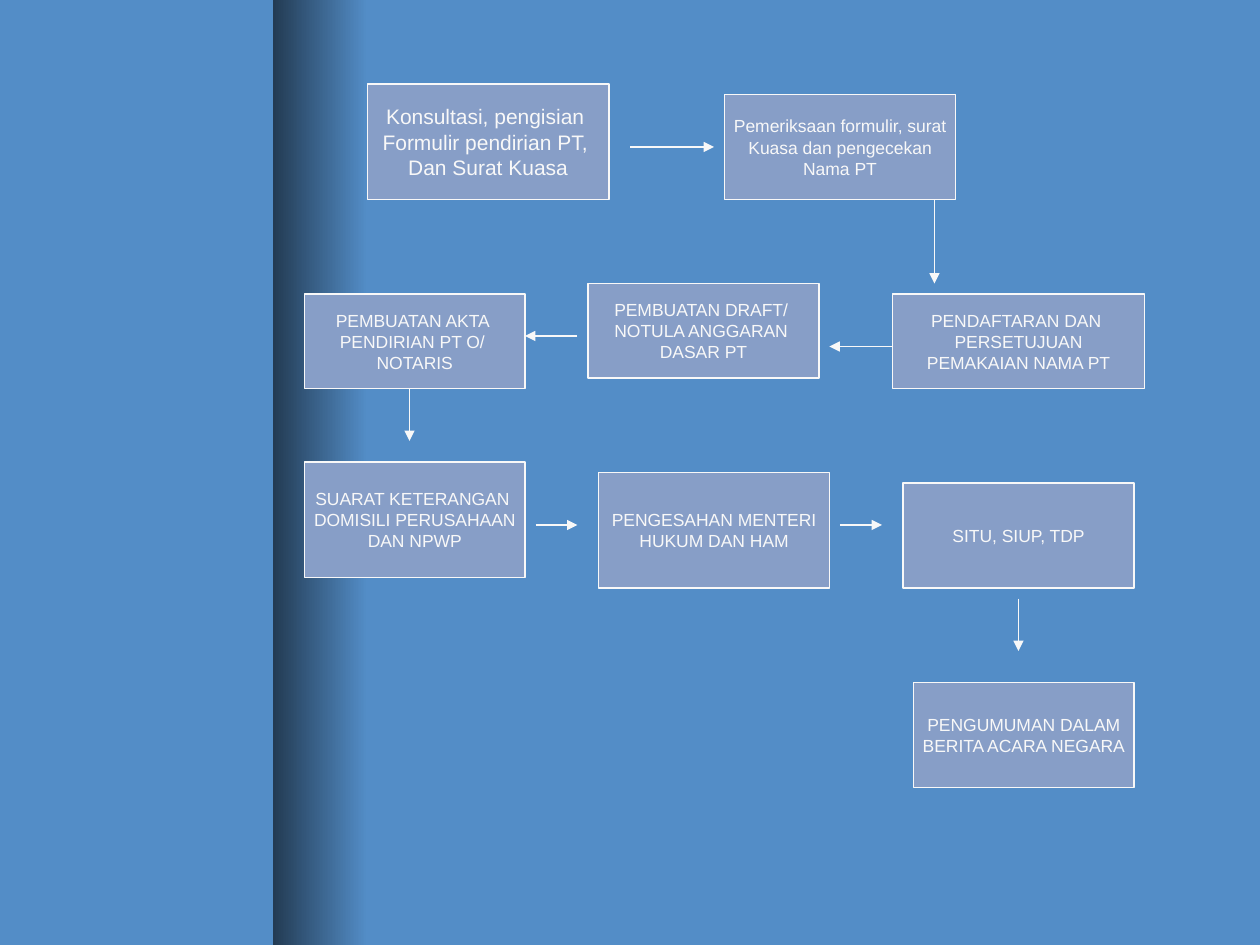
from dataclasses import dataclass

from lxml import etree
from pptx import Presentation, util as u
from pptx.dml.color import RGBColor
from pptx.enum import shapes, text
from pptx.oxml.ns import qn

CELL = u.Inches(1) // 12  # the slide is a grid of 120 columns by 90 rows
COLS, ROWS = 120, 90


@dataclass(frozen=True)
class Theme:
    background: RGBColor = RGBColor.from_string("538DC7")
    band_dark: RGBColor = RGBColor.from_string("233B53")
    box: RGBColor = RGBColor.from_string("879EC7")
    light: RGBColor = RGBColor.from_string("F8F8F8")
    font: str = "Arial"
    size: int = 10
    first_size: int = 12
    line: float = 0.75


@dataclass(frozen=True)
class Step:
    col: int
    row: int
    cols: int
    rows: int
    lines: tuple[str, ...]
    size: int = Theme.size


@dataclass(frozen=True)
class Arrow:
    col: int
    row: int
    across: int = 0
    down: int = 0


THEME = Theme()

STEPS = [
    Step(35, 8, 23, 11, ("Konsultasi, pengisian ", "Formulir pendirian PT, ",
                         "Dan Surat Kuasa"), THEME.first_size),
    Step(69, 9, 22, 10, ("Pemeriksaan formulir, surat", "Kuasa dan pengecekan",
                         "Nama PT")),
    Step(85, 28, 24, 9, ("PENDAFTARAN DAN ", "PERSETUJUAN",
                         "PEMAKAIAN NAMA PT")),
    Step(56, 27, 22, 9, ("PEMBUATAN DRAFT/ ", "NOTULA ANGGARAN ", "DASAR PT")),
    Step(29, 28, 21, 9, ("PEMBUATAN AKTA ", "PENDIRIAN PT O/ ", "NOTARIS")),
    Step(29, 44, 21, 11, ("SUARAT KETERANGAN ", "DOMISILI PERUSAHAAN",
                          "DAN NPWP")),
    Step(57, 45, 22, 11, ("PENGESAHAN MENTERI", "HUKUM DAN HAM")),
    Step(86, 46, 22, 10, ("SITU, SIUP, TDP",)),
    Step(87, 65, 21, 10, ("PENGUMUMAN DALAM", "BERITA ACARA NEGARA")),
]

ARROWS = [
    Arrow(60, 14, across=8),
    Arrow(89, 19, down=8),
    Arrow(85, 33, across=-6),
    Arrow(55, 32, across=-5),
    Arrow(39, 37, down=5),
    Arrow(51, 50, across=4),
    Arrow(80, 50, across=4),
    Arrow(97, 57, down=5),
]


def add_rect(slide, col: int, row: int, cols: int, rows: int):
    sp = slide.shapes.add_shape(shapes.MSO_SHAPE.RECTANGLE, col * CELL,
                                row * CELL, cols * CELL, rows * CELL)
    sp.shadow.inherit = False
    return sp


def add_band(slide) -> None:
    sp = add_rect(slide, 26, 0, 9, ROWS)
    sp.line.fill.background()
    sp.fill.gradient()
    sp.fill.gradient_angle = 0
    for stop, color in zip(sp.fill.gradient_stops,
                           (THEME.band_dark, THEME.background)):
        stop.color.rgb = color


def add_step(slide, step: Step) -> None:
    sp = add_rect(slide, step.col, step.row, step.cols, step.rows)
    sp.fill.solid()
    sp.fill.fore_color.rgb = THEME.box
    sp.line.color.rgb = THEME.light
    sp.line.width = u.Pt(THEME.line)
    tf = sp.text_frame
    tf.word_wrap = False
    tf.vertical_anchor = text.MSO_ANCHOR.MIDDLE
    tf.text = "\n".join(step.lines)
    for p in tf.paragraphs:
        p.alignment = text.PP_ALIGN.CENTER
        p.font.name = THEME.font
        p.font.size = u.Pt(step.size)
        p.font.color.rgb = THEME.light


def add_arrow(slide, arrow: Arrow) -> None:
    line = slide.shapes.add_connector(
        shapes.MSO_CONNECTOR.STRAIGHT, arrow.col * CELL, arrow.row * CELL,
        (arrow.col + arrow.across) * CELL, (arrow.row + arrow.down) * CELL)
    line.line.color.rgb = THEME.light
    line.line.width = u.Pt(THEME.line)
    sp_pr = line.element.spPr
    etree.SubElement(sp_pr.find(qn("a:ln")), qn("a:tailEnd"), type="triangle")
    etree.SubElement(sp_pr, qn("a:effectLst"))


def main() -> None:
    prs = Presentation()
    prs.slide_width, prs.slide_height = COLS * CELL, ROWS * CELL
    slide = prs.slides.add_slide(prs.slide_layouts[6])

    # Background and shaded band
    slide.background.fill.solid()
    slide.background.fill.fore_color.rgb = THEME.background
    add_band(slide)

    # Flowchart
    for step in STEPS:
        add_step(slide, step)
    for arrow in ARROWS:
        add_arrow(slide, arrow)

    prs.save("out.pptx")


if __name__ == "__main__":
    main()
